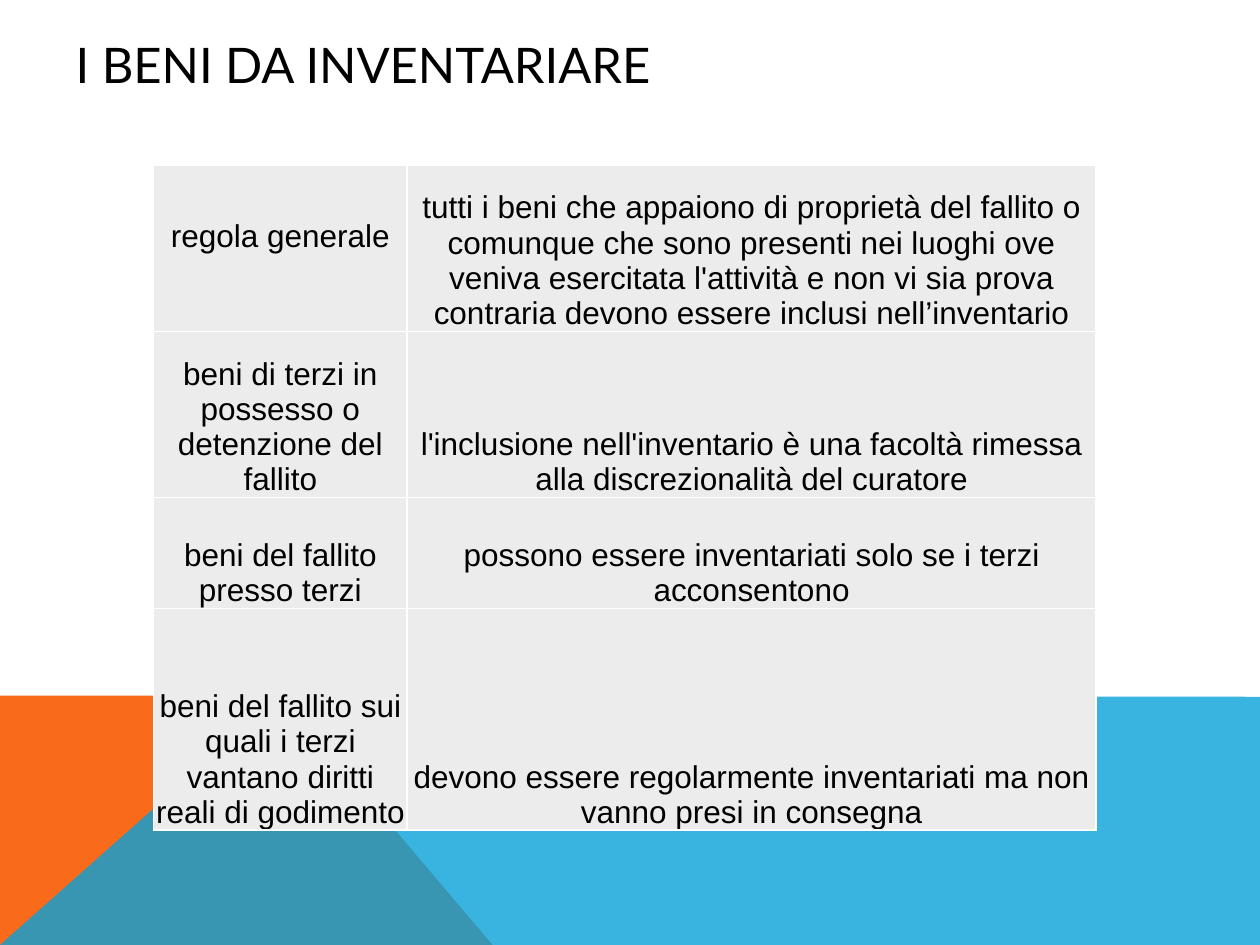
from dataclasses import dataclass

from lxml import etree
from pptx import Presentation, util as u
from pptx.dml import color
from pptx.enum import text
from pptx.oxml import ns


@dataclass(frozen=True)
class Band:
    points: tuple[tuple[float, float], ...]
    fill: str
    opacity: int = 100


@dataclass(frozen=True)
class Row:
    label: str
    rule: str
    height: float
    label_bottom: float = 0


BANDS = (
    Band(((0, 7.5), (0, 5.52), (2.23, 5.52), (3.91, 7.5)), "F96A1B"),
    Band(((0, 7.5), (2.23, 5.52), (10, 5.53), (10, 7.5)), "08A1D9", 80),
)
ROWS = (
    Row("regola generale",
        "tutti i beni che appaiono di proprietà del fallito o comunque che sono "
        "presenti nei luoghi ove veniva esercitata l'attività e non vi sia prova "
        "contraria devono essere inclusi nell’inventario", 1.32, 0.61),
    Row("beni di terzi in possesso o detenzione del fallito",
        "l'inclusione nell'inventario è una facoltà rimessa alla discrezionalità "
        "del curatore", 1.32),
    Row("beni del fallito presso terzi",
        "possono essere inventariati solo se i terzi acconsentono", 0.88),
    Row("beni del fallito sui quali i terzi vantano diritti reali di godimento",
        "devono essere regolarmente inventariati ma non vanno presi in consegna",
        1.76),
)
COLUMNS = (2.01, 5.47)
CELL_FORMAT = {
    "margin_left": u.Inches(0.01),
    "margin_right": u.Inches(0.01),
    "margin_top": u.Inches(0.01),
    "vertical_anchor": text.MSO_ANCHOR.BOTTOM,
}
CELL_FONT = {"name": "Arial", "size": u.Pt(18)}
TITLE_FONT = {"name": "Lato", "size": u.Pt(28), "bold": False}


def apply(target, values: dict) -> None:
    for name, value in values.items():
        setattr(target, name, value)


def paint(fill, value: str) -> None:
    fill.solid()
    fill.fore_color.rgb = color.RGBColor.from_string(value)


def style_font(font, values: dict) -> None:
    apply(font, values)
    paint(font.fill, "000000")


def draw_band(s, band: Band) -> None:
    start, *rest = [(x * 100, y * 100) for x, y in band.points]
    builder = s.shapes.build_freeform(*start, scale=u.Inches(0.01))
    builder.add_line_segments(rest, close=True)
    sp = builder.convert_to_shape()
    sp.shadow.inherit = False
    paint(sp.fill, band.fill)
    sp.line.fill.background()
    if band.opacity < 100:
        clr = sp.fill._xPr.find(".//" + ns.qn("a:srgbClr"))
        etree.SubElement(clr, ns.qn("a:alpha"), val=str(band.opacity * 1000))


def add_borders(cell, value: str) -> None:
    tc_pr = cell._tc.get_or_add_tcPr()
    for i, side in enumerate(("lnL", "lnR", "lnT", "lnB")):
        ln = etree.Element(ns.qn(f"a:{side}"), w=str(u.Pt(1)))
        fill = etree.SubElement(ln, ns.qn("a:solidFill"))
        etree.SubElement(fill, ns.qn("a:srgbClr"), val=value)
        tc_pr.insert(i, ln)


def fill_cell(cell, wording: str, bottom: float) -> None:
    apply(cell, CELL_FORMAT)
    cell.margin_bottom = u.Inches(bottom)
    paint(cell.fill, "ECECEC")
    add_borders(cell, "FFFFFF")
    p = cell.text_frame.paragraphs[0]
    p.alignment = text.PP_ALIGN.CENTER
    r = p.add_run()
    r.text = wording
    style_font(r.font, CELL_FONT)


def draw_table(s, rows: tuple[Row, ...]) -> None:
    height = sum(row.height for row in rows)
    frame = s.shapes.add_table(
        len(rows), len(COLUMNS), u.Inches(1.22), u.Inches(1.31),
        u.Inches(sum(COLUMNS)), u.Inches(height))
    table = frame.table
    table.first_row = table.horz_banding = False
    for column, width in zip(table.columns, COLUMNS):
        column.width = u.Inches(width)
    for i, row in enumerate(rows):
        table.rows[i].height = u.Inches(row.height)
        fill_cell(table.cell(i, 0), row.label, row.label_bottom)
        fill_cell(table.cell(i, 1), row.rule, 0)


def write_title(s, wording: str) -> None:
    sp = s.shapes.title
    apply(sp, {"left": u.Inches(0.5), "top": u.Inches(0.05),
               "width": u.Inches(9), "height": u.Inches(0.92)})
    tf = sp.text_frame
    tf.vertical_anchor = text.MSO_ANCHOR.MIDDLE
    p = tf.paragraphs[0]
    p.alignment = text.PP_ALIGN.LEFT
    r = p.add_run()
    r.text = wording
    style_font(r.font, TITLE_FONT)


def main() -> None:
    prs = Presentation()
    prs.slide_width, prs.slide_height = u.Inches(10), u.Inches(7.5)
    s = prs.slides.add_slide(prs.slide_layouts[5])
    paint(s.background.fill, "FFFFFF")
    for band in BANDS:
        draw_band(s, band)
    draw_table(s, ROWS)
    write_title(s, "I BENI DA INVENTARIARE")
    prs.save("out.pptx")


if __name__ == "__main__":
    main()
